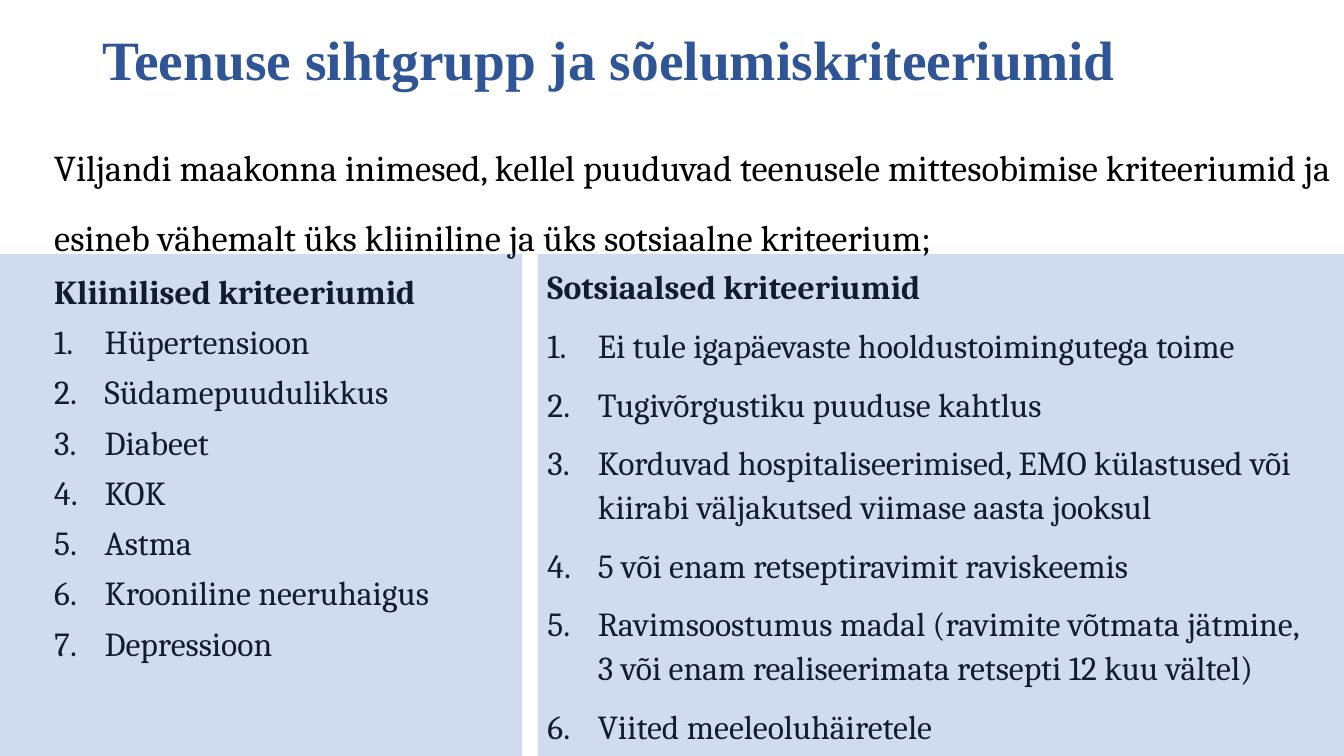
from pptx import Presentation
from pptx.dml.color import RGBColor
from pptx.enum import shapes, text
from pptx.oxml.ns import qn
from pptx.util import Pt
from lxml import etree

COLORS = {"title": "2F5597", "text": "000000", "panel": "4472C4"}
BODY_FONT = "Cambria"
SLIDE_W, SLIDE_H = 960, 540
PANEL_TOP = 181.5
SOCIAL_LEFT = 384
MARGIN = 31.7

CLINICAL = ["Hüpertensioon", "Südamepuudulikkus", "Diabeet", "KOK", "Astma",
            "Krooniline neeruhaigus", "Depressioon"]
SOCIAL = ["Ei tule igapäevaste hooldustoimingutega toime",
          "Tugivõrgustiku puuduse kahtlus",
          "Korduvad hospitaliseerimised, EMO külastused või "
          "kiirabi väljakutsed viimase aasta jooksul",
          "5 või enam retseptiravimit raviskeemis",
          "Ravimsoostumus madal (ravimite võtmata jätmine,\n"
          "3 või enam realiseerimata retsepti 12 kuu vältel)",
          "Viited meeleoluhäiretele"]


def format_runs(paragraph, font, size, color, bold=False):
    for run in paragraph.runs:
        run.font.name = font
        run.font.size = Pt(size)
        run.font.bold = bold
        run.font.color.rgb = RGBColor.from_string(COLORS[color])


def write(paragraph, content, size, spacing, align, bold=False):
    paragraph.text = content
    paragraph.alignment = align
    paragraph.line_spacing = spacing
    paragraph.space_before = Pt(10)
    format_runs(paragraph, BODY_FONT, size, "text", bold)


def number(paragraph):
    properties = paragraph._p.get_or_add_pPr()
    properties.set("marL", str(Pt(36)))
    properties.set("indent", str(Pt(-36)))
    etree.SubElement(properties, qn("a:buFont"), typeface="+mj-lt")
    etree.SubElement(properties, qn("a:buAutoNum"), type="arabicPeriod")


def add_title(slide, content):
    title = slide.shapes.title
    title.left, title.top, title.width, title.height = Pt(66), Pt(18), Pt(828), Pt(54)
    frame = title.text_frame
    frame.text = content
    frame.auto_size = text.MSO_AUTO_SIZE.NONE
    frame.vertical_anchor = text.MSO_ANCHOR.MIDDLE
    heading = frame.paragraphs[0]
    heading.alignment = text.PP_ALIGN.LEFT
    heading.line_spacing = 0.9
    format_runs(heading, "Times New Roman", 39.6, "title", True)


def add_text_frame(slide, left, top, width, height):
    frame = slide.shapes.add_textbox(Pt(left), Pt(top), Pt(width), Pt(height)).text_frame
    frame.word_wrap = True
    return frame


def add_criteria(slide, left, top, width, heading, criteria, spacing, align):
    frame = add_text_frame(slide, left, top, width, 363)
    write(frame.paragraphs[0], heading, 24, 0.9, text.PP_ALIGN.JUSTIFY, True)
    for criterion in criteria:
        item = frame.add_paragraph()
        write(item, criterion, 24, spacing, align)
        number(item)


def add_panel(slide, left, width):
    panel = slide.shapes.add_shape(shapes.MSO_SHAPE.RECTANGLE, Pt(left), Pt(PANEL_TOP),
                                   Pt(width), Pt(SLIDE_H - PANEL_TOP))
    panel.shadow.inherit = False
    panel.line.fill.background()
    panel.fill.solid()
    panel.fill.fore_color.rgb = RGBColor.from_string(COLORS["panel"])
    # Let the text behind show through
    color = panel._element.spPr.find(qn("a:solidFill"))[0]
    etree.SubElement(color, qn("a:alpha"), val="25000")


def main():
    deck = Presentation()
    deck.slide_width, deck.slide_height = Pt(SLIDE_W), Pt(SLIDE_H)
    slide = deck.slides.add_slide(deck.slide_layouts[5])

    # Title and introduction
    add_title(slide, "Teenuse sihtgrupp ja sõelumiskriteeriumid")
    intro = add_text_frame(slide, MARGIN, 81.4, SLIDE_W - MARGIN, 108.7)
    write(intro.paragraphs[0],
          "Viljandi maakonna inimesed, kellel puuduvad teenusele mittesobimise kriteeriumid "
          "ja esineb vähemalt üks kliiniline ja üks sotsiaalne kriteerium;",
          26, 1.6, text.PP_ALIGN.LEFT)

    # Criteria lists
    add_criteria(slide, MARGIN, 193, 381.6, "Kliinilised kriteeriumid",
                 CLINICAL, 0.9, text.PP_ALIGN.JUSTIFY)
    add_criteria(slide, SOCIAL_LEFT, 190, SLIDE_W - SOCIAL_LEFT, "Sotsiaalsed kriteeriumid",
                 SOCIAL, 1.1, text.PP_ALIGN.LEFT)

    # Translucent panels over the lists
    add_panel(slide, 0, 373)
    add_panel(slide, SOCIAL_LEFT, SLIDE_W - SOCIAL_LEFT)

    deck.save("out.pptx")


if __name__ == "__main__":
    main()
